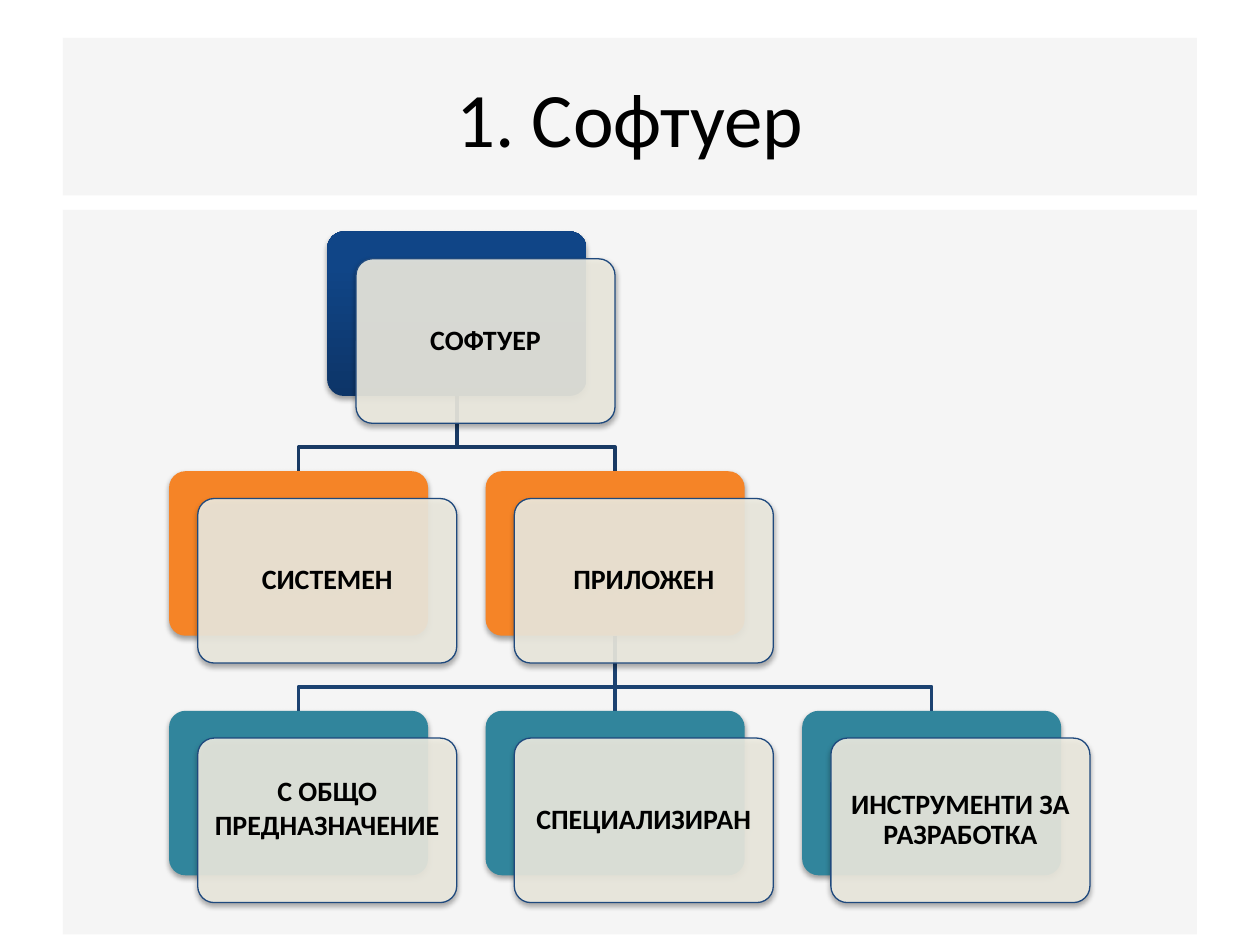
from lxml.etree import SubElement
from pptx import Presentation
from pptx.dml.color import RGBColor
from pptx.enum.shapes import MSO_SHAPE
from pptx.enum.text import MSO_ANCHOR, PP_ALIGN
from pptx.oxml.ns import qn
from pptx.util import Pt

BLACK = RGBColor(0, 0, 0)
GREY = RGBColor(0xF2, 0xF2, 0xF2)
CREAM = RGBColor(0xEE, 0xEC, 0xE1)
EDGE = RGBColor(0x1F, 0x49, 0x7D)
NAVY = RGBColor(0x0D, 0x35, 0x68)
BLUE = RGBColor(0x10, 0x45, 0x87)
ORANGE = RGBColor(0xF5, 0x84, 0x27)
TEAL = RGBColor(0x31, 0x85, 0x9C)
TOP_LINK = RGBColor(0x19, 0x3A, 0x64)
LOW_LINK = RGBColor(0x1C, 0x42, 0x71)

# Card grid, in points
WIDE, HIGH = 148, 94
LEFT, STEP = 96.6, 180.9
ROWS = (132.3, 269.3, 406.2)
SHIFT_X, SHIFT_Y = 16.4, 15.6
BEND = 29.2


def add_text(shape, text, size, bold=False, space=1.0, inset=7.2, foot=None):
    frame = shape.text_frame
    frame.word_wrap = True
    frame.vertical_anchor = MSO_ANCHOR.MIDDLE
    frame.margin_left = frame.margin_right = frame.margin_top = Pt(inset)
    frame.margin_bottom = Pt(inset if foot is None else foot)
    para = frame.paragraphs[0]
    para.alignment = PP_ALIGN.CENTER
    para.line_spacing = space
    run = para.add_run()
    run.text = text
    font = run.font
    font.name, font.size, font.bold = "Calibri", Pt(size), bold
    font.color.rgb = BLACK


def add_box(slide, kind, x, y, w, h, color, alpha=100):
    box = slide.shapes.add_shape(kind, Pt(x), Pt(y), Pt(w), Pt(h))
    box.shadow.inherit = False
    box.line.fill.background()
    box.fill.solid()
    box.fill.fore_color.rgb = color
    if alpha < 100:
        tint = box.element.spPr.find(qn("a:solidFill"))[0]
        SubElement(tint, qn("a:alpha"), val=str(alpha * 1000))
    return box


def add_shade(box):
    effects = box.element.spPr.find(qn("a:effectLst"))
    shade = SubElement(effects, qn("a:outerShdw"), blurRad=str(Pt(3.1)),
                       dist=str(Pt(1.8)), dir="5400000", rotWithShape="0")
    black = SubElement(shade, qn("a:srgbClr"), val="000000")
    SubElement(black, qn("a:alpha"), val="35000")


def add_plate(slide, x, y, color, alpha=100):
    plate = add_box(slide, MSO_SHAPE.ROUNDED_RECTANGLE, x, y, WIDE, HIGH,
                    color, alpha)
    plate.adjustments[0] = 0.1
    add_shade(plate)
    return plate


def add_card(slide, col, row, text, color, **style):
    x, y = LEFT + col * STEP, ROWS[row]
    back = add_plate(slide, x, y, color)
    if color == NAVY:
        back.fill.gradient()
        back.fill.gradient_angle = 90
        first, last = back.fill.gradient_stops
        first.color.rgb, first.position = NAVY, 0
        last.color.rgb, last.position = BLUE, 0.8
    front = add_plate(slide, x + SHIFT_X, y + SHIFT_Y, CREAM, 90)
    front.line.color.rgb = EDGE
    front.line.width = Pt(0.75)
    add_text(front, text, 16, bold=True, inset=5, **style)


def add_link(slide, start, end, row, color):
    """Link a card in one row to a card in the row below."""
    x1, x2 = (LEFT + col * STEP + WIDE / 2 for col in (start, end))
    y1, y2 = ROWS[row] + HIGH, ROWS[row + 1]
    points = [(x1, y1 + BEND), (x2, y1 + BEND), (x2, y2)]
    if start == end:
        points = points[-1:]
    path = slide.shapes.build_freeform(Pt(x1), Pt(y1))
    path.add_line_segments([(Pt(x), Pt(y)) for x, y in points], close=False)
    link = path.convert_to_shape()
    link.shadow.inherit = False
    link.fill.background()
    link.line.color.rgb = color
    link.line.width = Pt(2)


def main():
    deck = Presentation()
    deck.slide_width, deck.slide_height = Pt(720), Pt(540)
    slide = deck.slides.add_slide(deck.slide_layouts[6])

    # Title and panel
    title = add_box(slide, MSO_SHAPE.RECTANGLE, 36, 21.6, 648, 90, GREY, 75)
    add_text(title, "1. Софтуер", 44)
    add_box(slide, MSO_SHAPE.RECTANGLE, 36, 120, 648, 414, GREY, 75)

    # Links behind the cards
    for col in (2, 1, 0):
        add_link(slide, 1, col, 1, LOW_LINK)
    for col in (1, 0):
        add_link(slide, 0.5, col, 0, TOP_LINK)

    # Cards
    add_card(slide, 0.5, 0, "СОФТУЕР", NAVY, space=0.9)
    for col, text in enumerate(("СИСТЕМЕН", "ПРИЛОЖЕН")):
        add_card(slide, col, 1, text, ORANGE, space=0.9)
    add_card(slide, 0, 2, "С ОБЩО ПРЕДНАЗНАЧЕНИЕ", TEAL, foot=20)
    add_card(slide, 1, 2, "СПЕЦИАЛИЗИРАН", TEAL, space=0.9)
    add_card(slide, 2, 2, "ИНСТРУМЕНТИ ЗА РАЗРАБОТКА", TEAL, space=0.9)

    deck.save("out.pptx")


if __name__ == "__main__":
    main()
